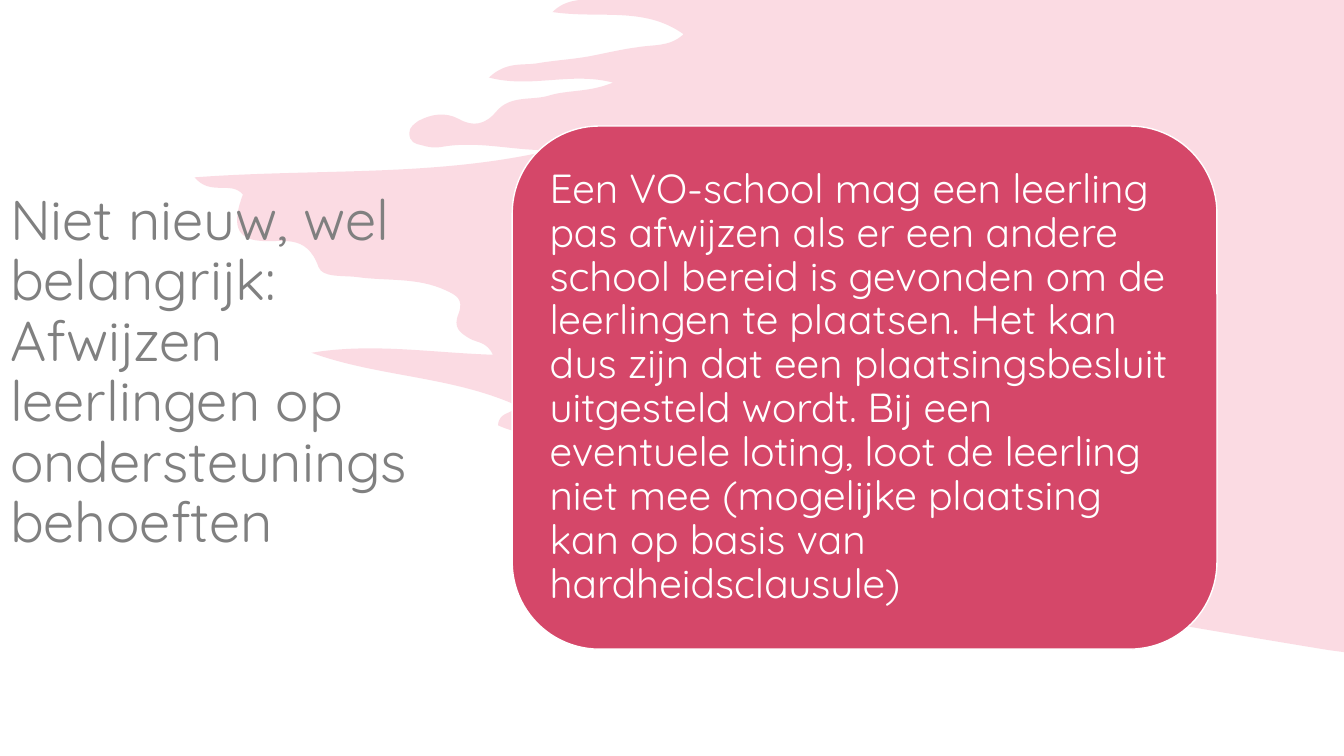
"""Build the slide on rejecting pupils with support needs."""

from typing import NamedTuple

from lxml.etree import SubElement
from pptx import Presentation
from pptx.dml.color import RGBColor
from pptx.enum.shapes import MSO_SHAPE as Preset
from pptx.enum.text import MSO_AUTO_SIZE as AutoSize
from pptx.enum.text import MSO_VERTICAL_ANCHOR as Anchor
from pptx.enum.text import PP_PARAGRAPH_ALIGNMENT as Align
from pptx.oxml.ns import qn
from pptx.util import Emu, Inches, Pt

COLUMNS, ROWS = 1333, 750
SLIDE_WIDTH, SLIDE_HEIGHT = Inches(13.33), Inches(7.5)
COLORS = {"brush": "EB4E74", "card": "D54769", "white": "FFFFFF", "heading": "808080"}


class Area(NamedTuple):
    """Left, top, width and height in grid columns and rows."""

    left: int
    top: int
    width: int
    height: int

    def inset(self, margin: int) -> "Area":
        """Shrink the area by a margin on all sides."""
        return Area(self.left + margin, self.top + margin,
                    self.width - 2 * margin, self.height - 2 * margin)

    def emu(self) -> dict[str, Emu]:
        """Give the area as slide lengths."""
        left, top = grid(self.left, self.top)
        width, height = grid(self.width, self.height)
        return {"left": left, "top": top, "width": width, "height": height}


class Passage(NamedTuple):
    """Wording with its size, colour and frame margins."""

    wording: str
    size: int
    color: str
    margin: float


class Curve(NamedTuple):
    """Two control points and the end of a brush curve."""

    x1: int
    y1: int
    x2: int
    y2: int
    x: int
    y: int


HEADING_AREA = Area(0, 106, 432, 529)
CARD_AREA = Area(508, 125, 699, 519)
HEADING = Passage(
    "Niet nieuw, wel belangrijk: Afwijzen leerlingen op ondersteuningsbehoeften",
    40, "heading", 0.1)
EXPLANATION = Passage(
    "Een VO-school mag een leerling pas afwijzen als er een andere school bereid is "
    "gevonden om de leerlingen te plaatsen. Het kan dus zijn dat een plaatsingsbesluit "
    "uitgesteld wordt. Bij een eventuele loting, loot de leerling niet mee (mogelijke "
    "plaatsing kan op basis van hardheidsclausule)", 29, "white", 0.12)

BRUSH_START, BRUSH_EDGE, BRUSH_END = (1333, 0), (575, 0), (1333, 647)
BRUSH_CURVES = [
    Curve(567, 1, 557, 3, 548, 12),
    Curve(595, 19, 639, 6, 678, 34),
    Curve(664, 47, 648, 44, 632, 47),
    Curve(616, 49, 600, 53, 584, 56),
    Curve(567, 59, 549, 60, 532, 63),
    Curve(518, 65, 502, 61, 485, 77),
    Curve(527, 88, 566, 71, 608, 82),
    Curve(584, 92, 563, 89, 544, 95),
    Curve(527, 100, 506, 94, 492, 111),
    Curve(481, 124, 469, 126, 455, 118),
    Curve(442, 111, 428, 113, 415, 120),
    Curve(411, 123, 406, 126, 406, 132),
    Curve(406, 141, 412, 143, 418, 144),
    Curve(424, 146, 431, 147, 437, 146),
    Curve(474, 139, 510, 150, 547, 149),
    Curve(431, 176, 314, 167, 193, 176),
    Curve(209, 195, 229, 179, 241, 193),
    Curve(230, 222, 234, 237, 258, 239),
    Curve(280, 241, 304, 231, 316, 265),
    Curve(320, 276, 341, 273, 355, 275),
    Curve(384, 279, 414, 275, 442, 288),
    Curve(453, 293, 460, 297, 455, 311),
    Curve(449, 325, 456, 330, 466, 336),
    Curve(473, 340, 483, 339, 489, 352),
    Curve(428, 350, 369, 340, 309, 350),
    Curve(375, 374, 447, 373, 512, 402),
    Curve(510, 412, 495, 407, 494, 422),
    Curve(528, 438, 569, 427, 605, 450),
    Curve(584, 461, 565, 444, 545, 454),
    Curve(552, 469, 840, 561, 892, 571),
    Curve(978, 587, 1195, 625, 1318, 645),
]


def grid(column: float, row: float) -> tuple[Emu, Emu]:
    """Turn a grid position into slide lengths."""
    return Emu(round(SLIDE_WIDTH * column / COLUMNS)), Emu(round(SLIDE_HEIGHT * row / ROWS))


def apply(target, formats: dict) -> None:
    """Set every format value on the target."""
    for attribute, value in formats.items():
        setattr(target, attribute, value)


def paint(fill, color: str) -> None:
    """Give a fill one solid colour."""
    fill.solid()
    fill.fore_color.rgb = RGBColor.from_string(COLORS[color])


def bend(brush) -> None:
    """Turn the straight brush segments into cubic curves."""
    segments = list(brush._element.iter(qn("a:lnTo")))[1:]
    for segment, curve in zip(segments, BRUSH_CURVES):
        segment.tag = qn("a:cubicBezTo")
        for index, control in enumerate((curve[:2], curve[2:4])):
            x, y = grid(*control)
            point = SubElement(segment, qn("a:pt"), x=str(x - brush.left), y=str(y - brush.top))
            segment.insert(index, point)


def draw_brush(slide) -> None:
    """Draw the pale brush stroke behind all else."""
    outline = [BRUSH_EDGE, *((curve.x, curve.y) for curve in BRUSH_CURVES), BRUSH_END]
    builder = slide.shapes.build_freeform(*grid(*BRUSH_START))
    builder.add_line_segments([grid(*point) for point in outline], close=True)
    brush = builder.convert_to_shape()
    bend(brush)
    brush.shadow.inherit = False
    paint(brush.fill, "brush")
    brush.line.fill.background()
    tint = brush._element.spPr.find(".//" + qn("a:srgbClr"))
    SubElement(tint, qn("a:alpha"), val="20000")
    slide.shapes._spTree.insert(2, brush._element)


def write(frame, passage: Passage) -> None:
    """Write and format a passage in a text frame."""
    frame.text = passage.wording
    margins = {f"margin_{side}": Inches(passage.margin)
               for side in ("left", "right")}
    apply(frame, {"word_wrap": True, "auto_size": AutoSize.NONE,
                  "vertical_anchor": Anchor.MIDDLE, **margins})
    paragraph = frame.paragraphs[0]
    apply(paragraph, {"alignment": Align.LEFT, "line_spacing": 0.9})
    font = paragraph.runs[0].font
    apply(font, {"name": "Quicksand", "size": Pt(passage.size)})
    font.color.rgb = RGBColor.from_string(COLORS[passage.color])


def draw_card(slide) -> None:
    """Draw the rounded card and its explanation."""
    group = slide.shapes.add_group_shape().shapes
    card = group.add_shape(Preset.ROUNDED_RECTANGLE, **CARD_AREA.emu())
    card.shadow.inherit = False
    paint(card.fill, "card")
    paint(card.line.fill, "white")
    card.line.width = Pt(1)
    explanation = group.add_textbox(**CARD_AREA.inset(25).emu())
    write(explanation.text_frame, EXPLANATION)


def main() -> None:
    """Build and save the slide."""
    deck = Presentation()
    apply(deck, {"slide_width": SLIDE_WIDTH, "slide_height": SLIDE_HEIGHT})
    slide = deck.slides.add_slide(deck.slide_layouts[5])
    draw_brush(slide)
    apply(slide.shapes.title, HEADING_AREA.emu())
    write(slide.shapes.title.text_frame, HEADING)
    draw_card(slide)
    deck.save("out.pptx")


if __name__ == "__main__":
    main()
